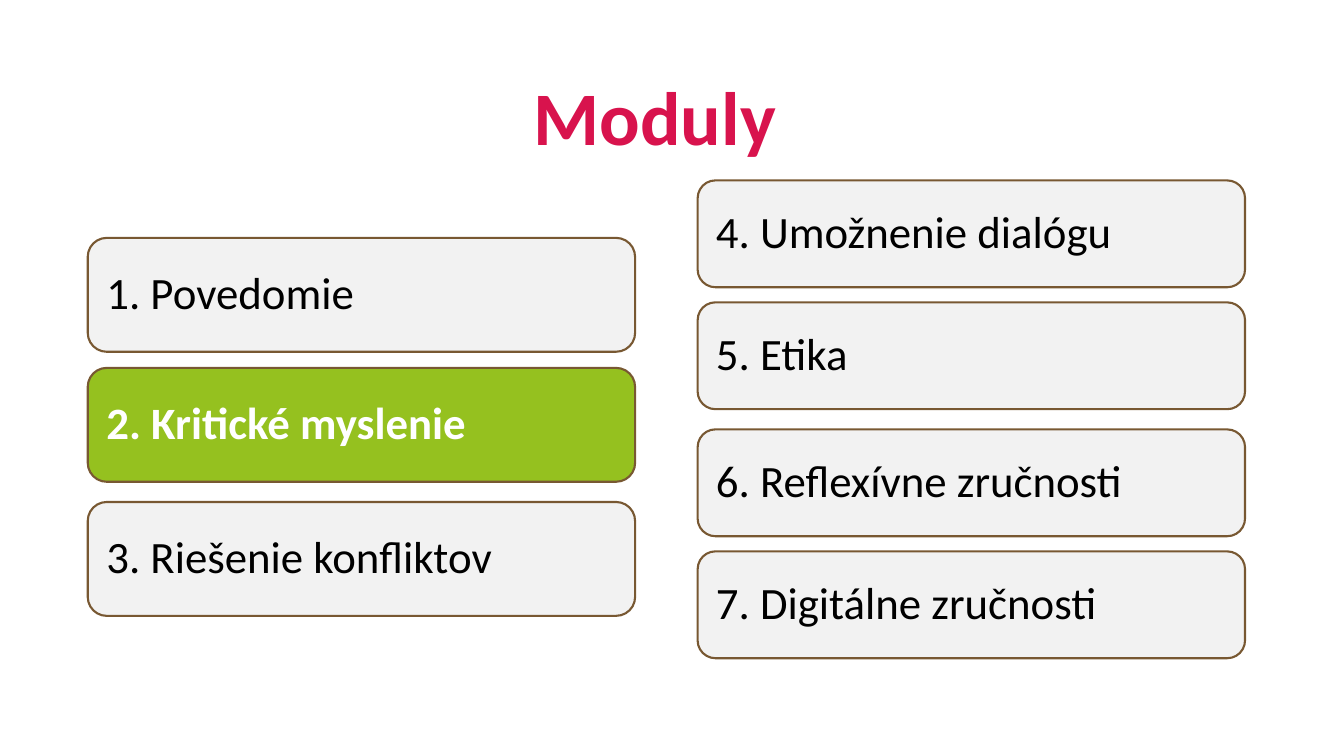
from pptx import Presentation
from pptx.dml.color import RGBColor
from pptx.enum.shapes import MSO_SHAPE as Preset
from pptx.enum.text import MSO_ANCHOR as Anchor, PP_ALIGN as Align
from pptx.util import Inches, Pt

COLORS = {
    "title": "D8134D",
    "card": "F2F2F2",
    "active": "95C11F",
    "border": "785832",
    "text": "000000",
    "active_text": "FFFFFF",
}
WIDTH, HEIGHT = Inches(13.33), Inches(7.5)
COLUMNS = ROWS = 100
ACTIVE_MODULE = "2. Kritické myslenie"


def color(key):
    return RGBColor.from_string(COLORS[key])


def on_grid(left, top, width, height):
    return (
        int(left * WIDTH / COLUMNS),
        int(top * HEIGHT / ROWS),
        int(width * WIDTH / COLUMNS),
        int(height * HEIGHT / ROWS),
    )


def write(frame, wording, size, color_key, bold, align, anchor):
    frame.word_wrap = True
    frame.vertical_anchor = anchor
    frame.text = wording
    paragraph = frame.paragraphs[0]
    paragraph.alignment = align
    paragraph.line_spacing = 0.9
    font = paragraph.runs[0].font
    font.name = "Calibri"
    font.size = Pt(size)
    font.bold = bold
    font.color.rgb = color(color_key)


def add_title(slide, box, wording):
    title = slide.shapes.add_textbox(*on_grid(*box))
    write(title.text_frame, wording, 54, "title", True, Align.CENTER, Anchor.BOTTOM)


def add_card(slide, box, module):
    active = module == ACTIVE_MODULE
    card = slide.shapes.add_shape(Preset.ROUNDED_RECTANGLE, *on_grid(*box))
    card.shadow.inherit = False
    card.fill.solid()
    card.fill.fore_color.rgb = color("active" if active else "card")
    card.line.color.rgb = color("border")
    card.line.width = Pt(1.5)
    frame = card.text_frame
    frame.margin_left = frame.margin_right = Inches(0.13)
    frame.margin_top = frame.margin_bottom = Inches(0.13)
    text_color = "active_text" if active else "text"
    write(frame, module, 32, text_color, active, Align.LEFT, Anchor.MIDDLE)


def add_module_column(slide, box, modules, gaps):
    left, top, width, height = box
    card_height = (height - sum(gaps)) / len(modules)
    for module, gap in zip(modules, [*gaps, 0]):
        add_card(slide, (left, top, width, card_height), module)
        top += card_height + gap


def main():
    deck = Presentation()
    deck.slide_width, deck.slide_height = WIDTH, HEIGHT
    slide = deck.slides.add_slide(deck.slide_layouts[6])
    add_title(slide, (0.08, -4, 97.3, 26), "Moduly")
    add_module_column(
        slide,
        (6.53, 31.47, 40.73, 50),
        ["1. Povedomie", ACTIVE_MODULE, "3. Riešenie konfliktov"],
        [2.13, 2.67],
    )
    add_module_column(
        slide,
        (51.91, 23.87, 40.73, 63.2),
        [
            "4. Umožnenie dialógu",
            "5. Etika",
            "6. Reflexívne zručnosti",
            "7. Digitálne zručnosti",
        ],
        [2, 2.67, 2],
    )
    deck.save("out.pptx")


if __name__ == "__main__":
    main()
